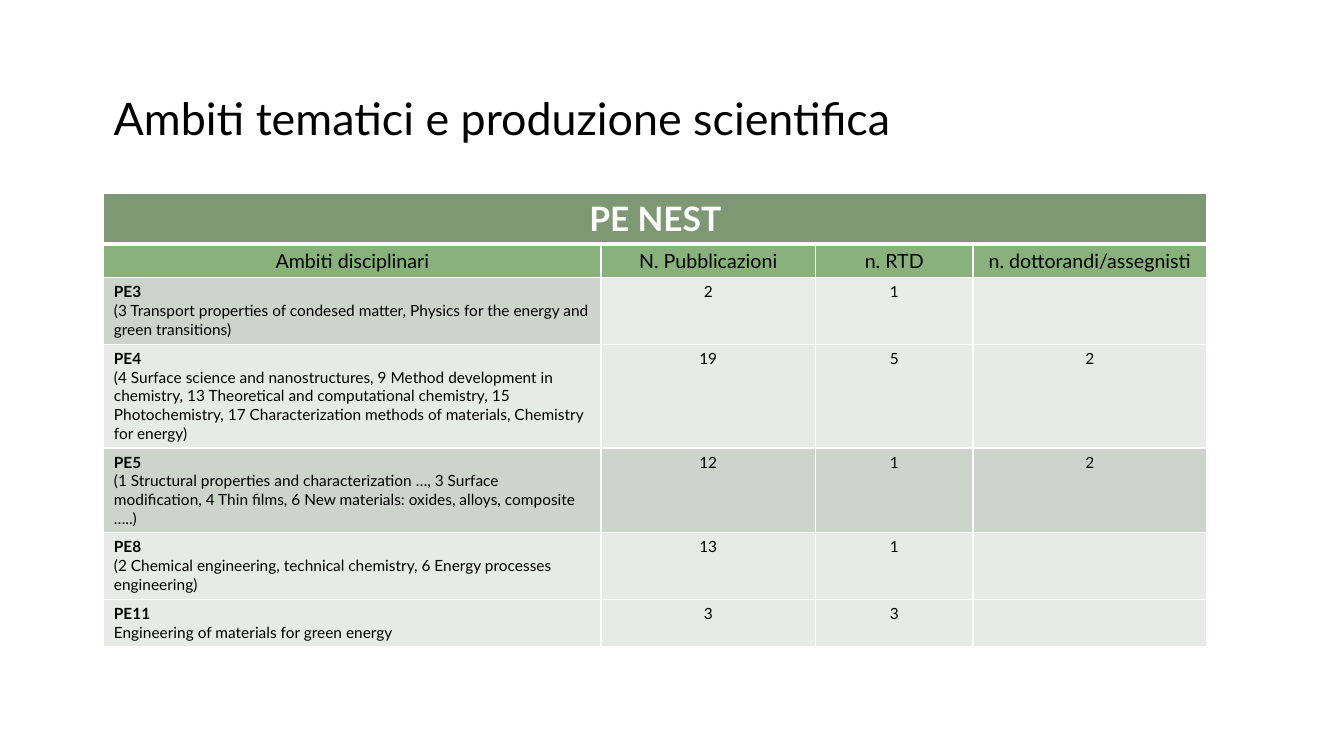
"""Build a slide with a table of research areas and scientific output."""
from dataclasses import dataclass

from lxml.etree import SubElement
from pptx import Presentation
from pptx.dml.color import RGBColor
from pptx.enum.text import MSO_ANCHOR, PP_ALIGN
from pptx.oxml.ns import qn
from pptx.util import Inches, Pt


@dataclass(frozen=True)
class Theme:
    font: str = "Lato"
    ink: str = "000000"
    white: str = "FFFFFF"
    banner: str = "275417"
    header: str = "3B7D23"
    dark: str = "CCD4CC"
    light: str = "E7EBE8"
    pale: str = "E8EBE8"
    alpha: int = 60
    title: int = 32
    head: int = 24
    label: int = 14
    body: int = 11


@dataclass(frozen=True)
class Area:
    code: str
    topics: str
    counts: tuple[str, str, str]
    height: float
    first: str
    rest: str


THEME = Theme()
WIDTHS = (4.93, 2.13, 1.56, 2.32)
HEADS = ("Ambiti disciplinari", "N. Pubblicazioni", "n. RTD", "n. dottorandi/assegnisti")
TOPS = (0.5, 0.33)
AREAS = (
    Area("PE3", "(3 Transport properties of condesed matter, Physics for the energy "
         "and green transitions)", ("2", "1", ""), 0.66, THEME.dark, THEME.pale),
    Area("PE4", "(4 Surface science and nanostructures, 9 Method development in "
         "chemistry, 13 Theoretical and computational chemistry, 15 Photochemistry, "
         "17 Characterization methods of materials, Chemistry for energy)",
         ("19", "5", "2"), 1.03, THEME.light, THEME.light),
    Area("PE5", "(1 Structural properties and characterization …, 3 Surface "
         "modification, 4 Thin films, 6 New materials: oxides, alloys, composite …..)",
         ("12", "1", "2"), 0.84, THEME.dark, THEME.dark),
    Area("PE8", "(2 Chemical engineering, technical chemistry, 6 Energy processes "
         "engineering)", ("13", "1", ""), 0.66, THEME.light, THEME.light),
    Area("PE11", "Engineering of materials for green energy", ("3", "3", ""), 0.46,
         THEME.light, THEME.light),
)


def write(para, text: str, *, size: int, color: str = THEME.ink,
          bold: bool = False, align=PP_ALIGN.LEFT) -> None:
    """Write one formatted run into a paragraph."""
    para.alignment = align
    if not text:
        para.font.size = Pt(size)
        return
    run = para.add_run()
    run.text = text
    run.font.name = THEME.font
    run.font.size = Pt(size)
    run.font.bold = bold
    run.font.color.rgb = RGBColor.from_string(color)


def paint(cell, color: str, *, alpha: int = 100, top: int = 1, base: int = 1) -> None:
    """Give a cell its white borders and its fill."""
    props = cell._tc.get_or_add_tcPr()
    for side, width in (("L", 1), ("R", 1), ("T", top), ("B", base)):
        line = SubElement(props, qn(f"a:ln{side}"), w=str(Pt(width)))
        fill = SubElement(line, qn("a:solidFill"))
        SubElement(fill, qn("a:srgbClr"), val=THEME.white)
    cell.fill.solid()
    cell.fill.fore_color.rgb = RGBColor.from_string(color)
    if alpha < 100:
        tint = props.find(qn("a:solidFill")).find(qn("a:srgbClr"))
        SubElement(tint, qn("a:alpha"), val=str(alpha * 1000))


def add_title(slide) -> None:
    """Add the slide title."""
    box = slide.shapes.add_textbox(Inches(1.03), Inches(0.47), Inches(11.5), Inches(1.45))
    frame = box.text_frame
    frame.word_wrap = True
    frame.vertical_anchor = MSO_ANCHOR.MIDDLE
    para = frame.paragraphs[0]
    para.line_spacing = 0.9
    write(para, "Ambiti tematici e produzione scientifica", size=THEME.title)


def fill_area(table, row: int, area: Area) -> None:
    """Fill one table row with a research area."""
    cell = table.cell(row, 0)
    paint(cell, area.first)
    frame = cell.text_frame
    write(frame.paragraphs[0], area.code, size=THEME.body, bold=True)
    write(frame.add_paragraph(), area.topics, size=THEME.body)
    for col, count in enumerate(area.counts, 1):
        cell = table.cell(row, col)
        paint(cell, area.rest)
        write(cell.text_frame.paragraphs[0], count, size=THEME.body, align=PP_ALIGN.CENTER)


def add_grid(slide) -> None:
    """Add the table of research areas."""
    heights = TOPS + tuple(area.height for area in AREAS)
    table = slide.shapes.add_table(
        len(heights), len(WIDTHS), Inches(1.03), Inches(1.92),
        Inches(sum(WIDTHS)), Inches(sum(heights))).table
    table.first_row = table.horz_banding = False
    for col, width in zip(table.columns, WIDTHS):
        col.width = Inches(width)
    for row, height in zip(table.rows, heights):
        row.height = Inches(height)
    banner = table.cell(0, 0)
    banner.merge(table.cell(0, len(WIDTHS) - 1))
    write(banner.text_frame.paragraphs[0], "PE NEST", size=THEME.head,
          color=THEME.white, bold=True, align=PP_ALIGN.CENTER)
    for col, head in enumerate(HEADS):
        paint(table.cell(0, col), THEME.banner, alpha=THEME.alpha, base=3)
        cell = table.cell(1, col)
        paint(cell, THEME.header, alpha=THEME.alpha, top=3)
        write(cell.text_frame.paragraphs[0], head, size=THEME.label, align=PP_ALIGN.CENTER)
    for row, area in enumerate(AREAS, len(TOPS)):
        fill_area(table, row, area)


def main() -> None:
    """Build and save the deck."""
    deck = Presentation()
    deck.slide_width, deck.slide_height = Inches(13.33), Inches(7.5)
    slide = deck.slides.add_slide(deck.slide_layouts[6])
    add_title(slide)
    add_grid(slide)
    deck.save("out.pptx")


if __name__ == "__main__":
    main()
